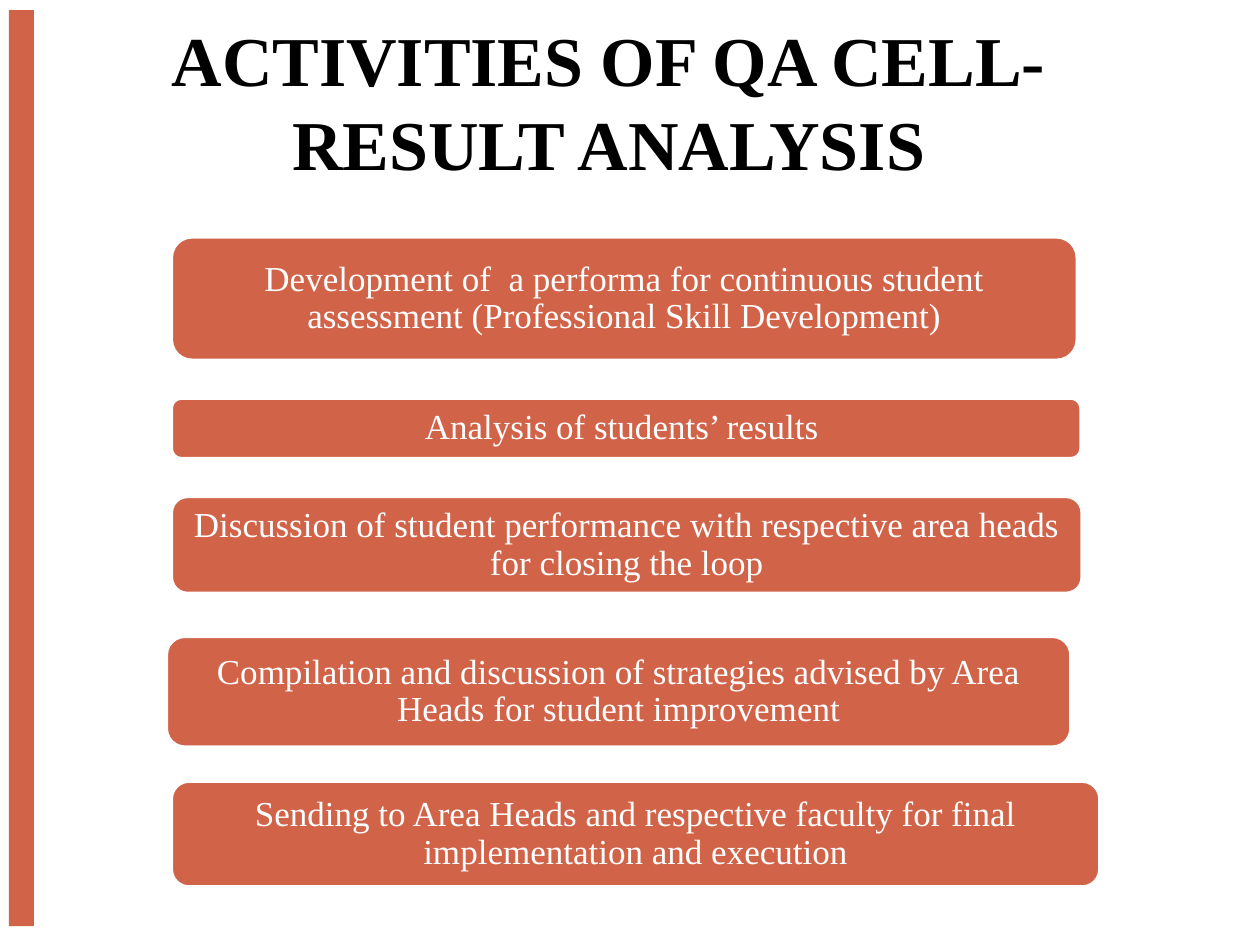
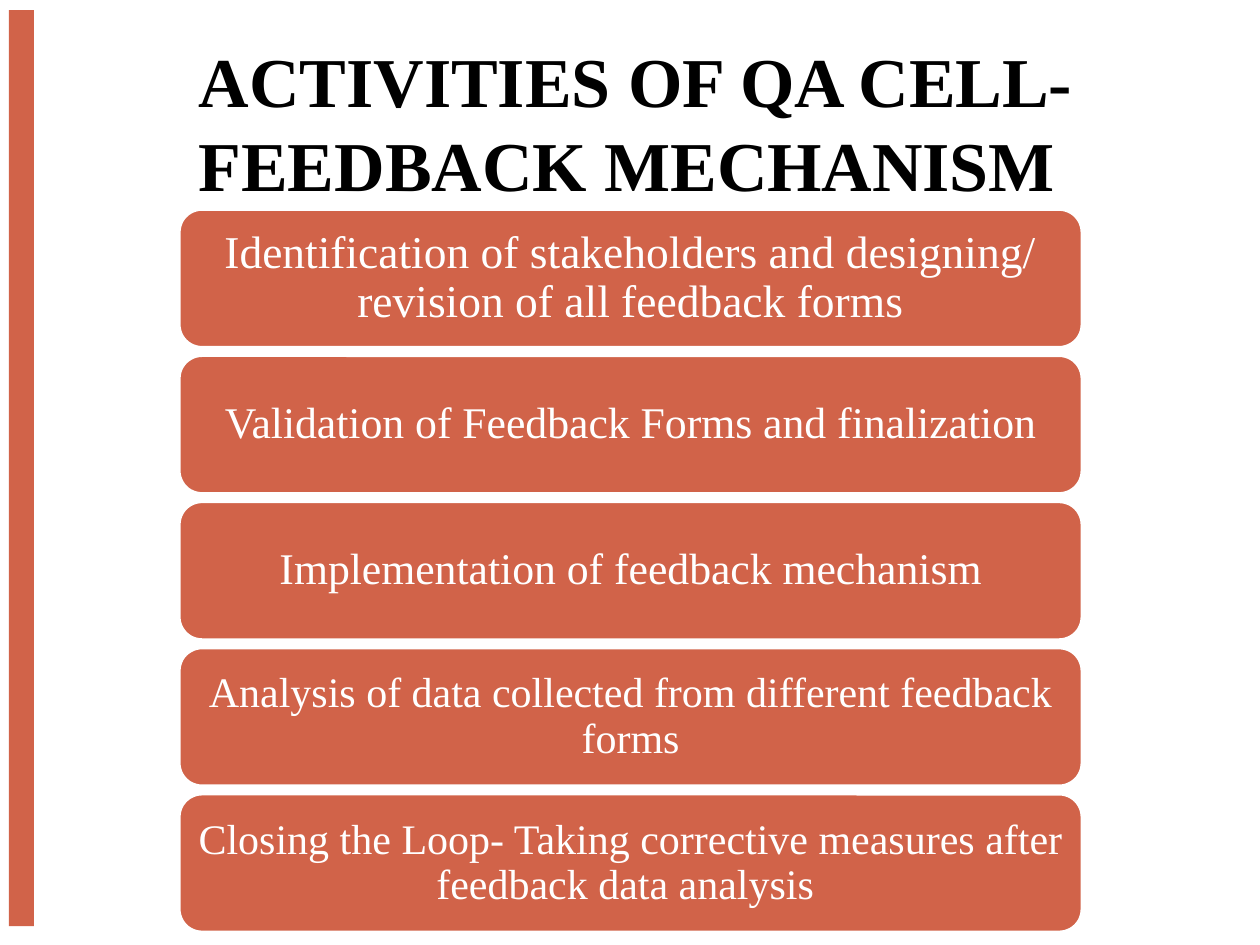
from dataclasses import dataclass

from pptx import Presentation
from pptx import util as u
from pptx.dml.color import RGBColor
from pptx.enum import shapes, text


@dataclass(frozen=True)
class Theme:
    font: str = "Times New Roman"
    accent: RGBColor = RGBColor(0xD1, 0x63, 0x49)
    light: RGBColor = RGBColor(0xFF, 0xFF, 0xFF)
    dark: RGBColor = RGBColor(0x00, 0x00, 0x00)
    title_size: int = 40
    outline: int = 2


theme = Theme()


def add_block(page, kind, area, fill):
    block = page.shapes.add_shape(kind, *[u.Inches(length) for length in area])
    block.shadow.inherit = False
    block.fill.solid()
    block.fill.fore_color.rgb = fill
    block.line.fill.background()
    return block


def write(box, words, size, color, bold=False):
    box.text_frame.word_wrap = True
    para = box.text_frame.paragraphs[0]
    para.alignment = text.PP_ALIGN.CENTER
    span = para.add_run()
    span.text = words
    span.font.name = theme.font
    span.font.size = u.Pt(size)
    span.font.bold = bold
    span.font.color.rgb = color
    return para


result_steps = [
    ("Development of  a performa for continuous student assessment (Professional Skill Development)",
     20, (1.36, 1.88, 7.19, 0.98)),
    ("Analysis of students’ results ", 20, (1.36, 3.16, 7.22, 0.48)),
    ("Discussion of student performance with respective area heads for closing the loop",
     20, (1.36, 3.94, 7.23, 0.77)),
    ("Compilation and discussion of strategies advised by Area Heads for student improvement",
     20, (1.32, 5.05, 7.18, 0.88)),
    ("Sending to Area Heads and respective faculty for final implementation and execution",
     20, (1.36, 6.2, 7.37, 0.84)),
]

feedback_texts = [
    ("Identification of stakeholders and designing/ revision of all feedback forms", 26),
    ("Validation of Feedback Forms and finalization", 25),
    ("Implementation of feedback mechanism", 25),
    ("Analysis of data collected from different feedback forms", 24),
    ("Closing the Loop- Taking corrective measures after feedback data analysis ", 24),
]
feedback_top, feedback_pitch = 1.66, 1.16
feedback_steps = [
    (words, size, (1.42, feedback_top + row * feedback_pitch, 7.17, 1.1))
    for row, (words, size) in enumerate(feedback_texts)
]

pages = [
    ("ACTIVITIES OF QA CELL- RESULT ANALYSIS", (0.58, 0.08, 8.5, 1.45), result_steps),
    ("ACTIVITIES OF QA CELL- FEEDBACK MECHANISM ", (0.42, 0.25, 9.25, 1.45), feedback_steps),
]

deck = Presentation()
deck.slide_width = u.Inches(10)
deck.slide_height = u.Inches(7.5)

for title, title_area, steps in pages:
    page = deck.slides.add_slide(deck.slide_layouts[6])
    add_block(page, shapes.MSO_SHAPE.RECTANGLE, (0.07, 0.08, 0.2, 7.27), theme.accent)

    for words, size, area in steps:
        step = add_block(page, shapes.MSO_SHAPE.ROUNDED_RECTANGLE, area, theme.accent)
        step.line.color.rgb = theme.light
        step.line.width = u.Pt(theme.outline)
        frame = step.text_frame
        frame.vertical_anchor = text.MSO_ANCHOR.MIDDLE
        frame.margin_left = frame.margin_right = u.Pt(size * 0.3)
        frame.margin_top = frame.margin_bottom = u.Pt(size * 0.15)
        para = write(step, words, size, theme.light)
        para.line_spacing = 0.9

    heading = page.shapes.add_textbox(*[u.Inches(length) for length in title_area])
    write(heading, title, theme.title_size, theme.dark, bold=True)
    heading.text_frame.auto_size = text.MSO_AUTO_SIZE.SHAPE_TO_FIT_TEXT

deck.save("out.pptx")
